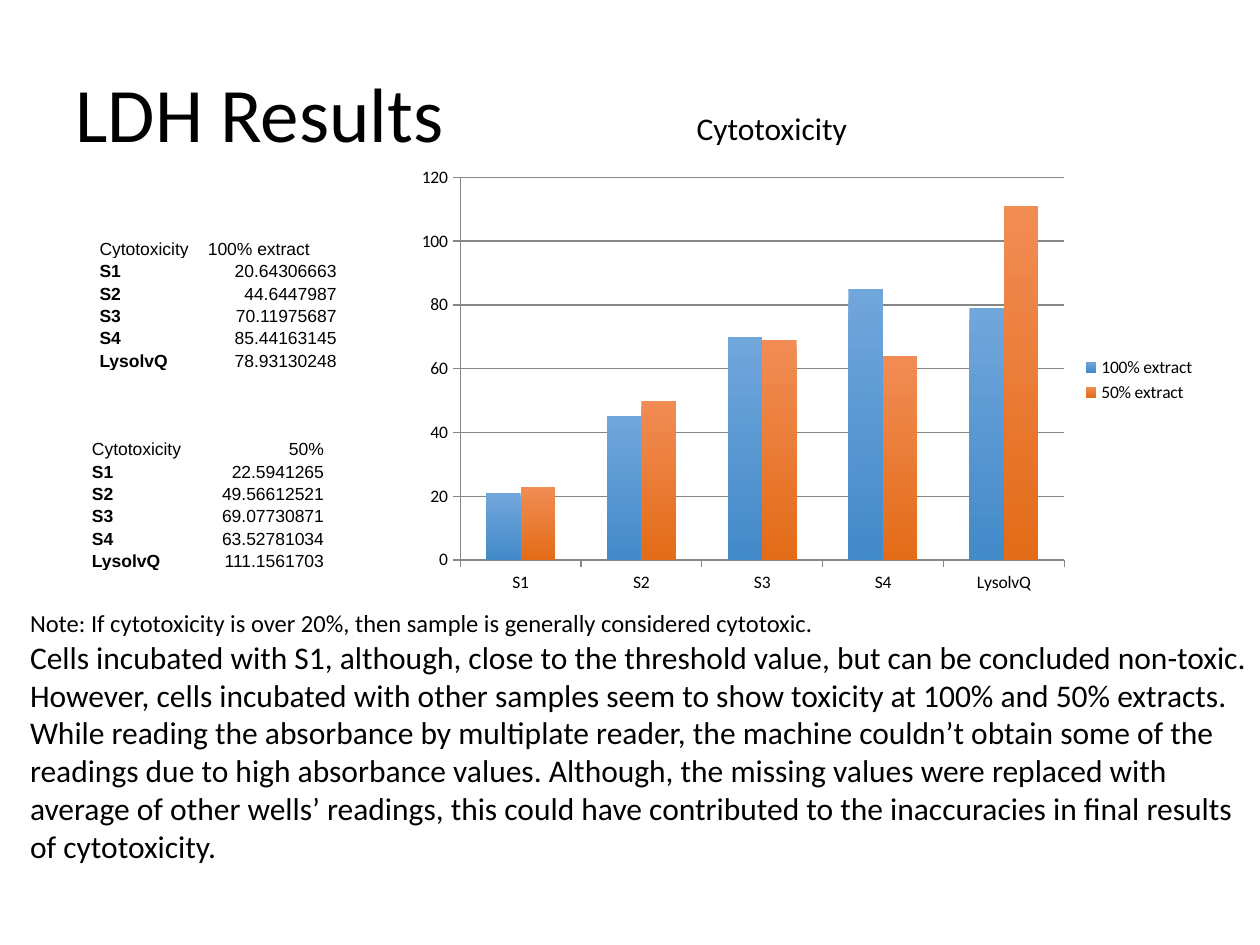
"""Build the LDH results slide with two cytotoxicity tables and a column chart."""
import pptx
import pptx.chart.data
import pptx.dml.color
import pptx.enum.chart
import pptx.enum.text
import pptx.util

Inches, Pt = pptx.util.Inches, pptx.util.Pt
RGB = pptx.dml.color.RGBColor.from_string
ANCHOR, ALIGN = pptx.enum.text.MSO_ANCHOR, pptx.enum.text.PP_ALIGN

COLORS = {"text": "000000", "line": "868686"}
GRADIENTS = {
    "100% extract": ("71A6DB", "438AC9"),
    "50% extract": ("F18C55", "E36C18"),
}
SAMPLES = ["S1", "S2", "S3", "S4", "LysolvQ"]
READINGS = {
    "100% extract": ["20.64306663", "44.6447987", "70.11975687", "85.44163145", "78.93130248"],
    "50% extract": ["22.5941265", "49.56612521", "69.07730871", "63.52781034", "111.1561703"],
}


def set_font(font, size, name="Calibri", bold=False):
    formats = {"size": Pt(size), "name": name, "bold": bold}
    for attribute, value in formats.items():
        setattr(font, attribute, value)
    font.color.rgb = RGB(COLORS["text"])


def add_text(box, paragraphs, wrap=True, anchor=ANCHOR.TOP, spacing=None):
    frame = slide.shapes.add_textbox(*map(Inches, box)).text_frame
    frame.word_wrap = wrap
    frame.vertical_anchor = anchor
    for index, (text, size) in enumerate(paragraphs):
        paragraph = frame.add_paragraph() if index else frame.paragraphs[0]
        paragraph.line_spacing = spacing
        run = paragraph.add_run()
        run.text = text
        set_font(run.font, size)


deck = pptx.Presentation()
deck.slide_width, deck.slide_height = Inches(10), Inches(7.5)
slide = deck.slides.add_slide(deck.slide_layouts[6])

add_text((0.5, 0.21, 8.5, 1.45), [("LDH Results", 44)], anchor=ANCHOR.MIDDLE, spacing=0.9)

chart_data = pptx.chart.data.CategoryChartData()
chart_data.categories = SAMPLES
for extract, values in READINGS.items():
    chart_data.add_series(extract, [round(float(value)) for value in values])
chart = slide.shapes.add_chart(
    pptx.enum.chart.XL_CHART_TYPE.COLUMN_CLUSTERED,
    Inches(3.22), Inches(1.26), Inches(6.37), Inches(3.51), chart_data,
).chart
set_font(chart.font, 10)
chart.has_title = False
chart.has_legend = True
chart.legend.position = pptx.enum.chart.XL_LEGEND_POSITION.RIGHT
chart.legend.include_in_layout = False
bars = chart.plots[0]
bars.gap_width, bars.overlap, bars.vary_by_categories = 150, 0, False
for series in bars.series:
    fill = series.format.fill
    fill.gradient()
    fill.gradient_angle = 270
    for stop, color in zip(fill.gradient_stops, GRADIENTS[series.name]):
        stop.color.rgb = RGB(color)
chart.value_axis.minimum_scale = 0
chart.value_axis.maximum_scale = 120
chart.value_axis.major_unit = 20
chart.value_axis.has_major_gridlines = True
for axis in (chart.category_axis, chart.value_axis):
    axis.major_tick_mark = pptx.enum.chart.XL_TICK_MARK.OUTSIDE
    axis.format.line.color.rgb = RGB(COLORS["line"])
chart.value_axis.major_gridlines.format.line.color.rgb = RGB(COLORS["line"])

tables = [
    ("100% extract", "100% extract", ALIGN.LEFT, 0.78, 1.88, (0.86, 1.04)),
    ("50% extract", "50%", ALIGN.RIGHT, 0.72, 3.47, (0.84, 1.02)),
]
row_height = 0.17
cell_formats = {
    "margin_left": Inches(0.01),
    "margin_right": Inches(0.01),
    "margin_top": Inches(0.01),
    "margin_bottom": 0,
    "vertical_anchor": ANCHOR.BOTTOM,
}
for extract, heading, heading_align, left, top, widths in tables:
    rows = [("Cytotoxicity", heading), *zip(SAMPLES, READINGS[extract])]
    table = slide.shapes.add_table(
        len(rows), 2, Inches(left), Inches(top),
        Inches(sum(widths)), Inches(row_height * len(rows)),
    ).table
    table.first_row = table.horz_banding = False
    for column, width in zip(table.columns, widths):
        column.width = Inches(width)
    for r, row in enumerate(rows):
        for c, text in enumerate(row):
            cell = table.cell(r, c)
            cell.fill.background()
            for attribute, value in cell_formats.items():
                setattr(cell, attribute, value)
            paragraph = cell.text_frame.paragraphs[0]
            value_align = ALIGN.RIGHT if r else heading_align
            paragraph.alignment = value_align if c else ALIGN.LEFT
            run = paragraph.add_run()
            run.text = text
            set_font(run.font, 10, "Arial", bold=r > 0 and c == 0)

add_text((0.14, 4.78, 9.86, 2.46), [
    ("Note: If cytotoxicity is over 20%, then sample is generally considered cytotoxic.", 14),
    ("Cells incubated with S1, although, close to the threshold value, but can be concluded "
     "non-toxic. However, cells incubated with other samples seem to show toxicity at 100% "
     "and 50% extracts.", 18),
    ("While reading the absorbance by multiplate reader, the machine couldn’t obtain some of "
     "the readings due to high absorbance values. Although, the missing values were replaced "
     "with average of other wells’ readings, this could have contributed to the inaccuracies "
     "in final results of cytotoxicity.", 18),
])
add_text((5.43, 0.82, 1.5, 0.4), [("Cytotoxicity", 18)], wrap=False)

deck.save("out.pptx")
